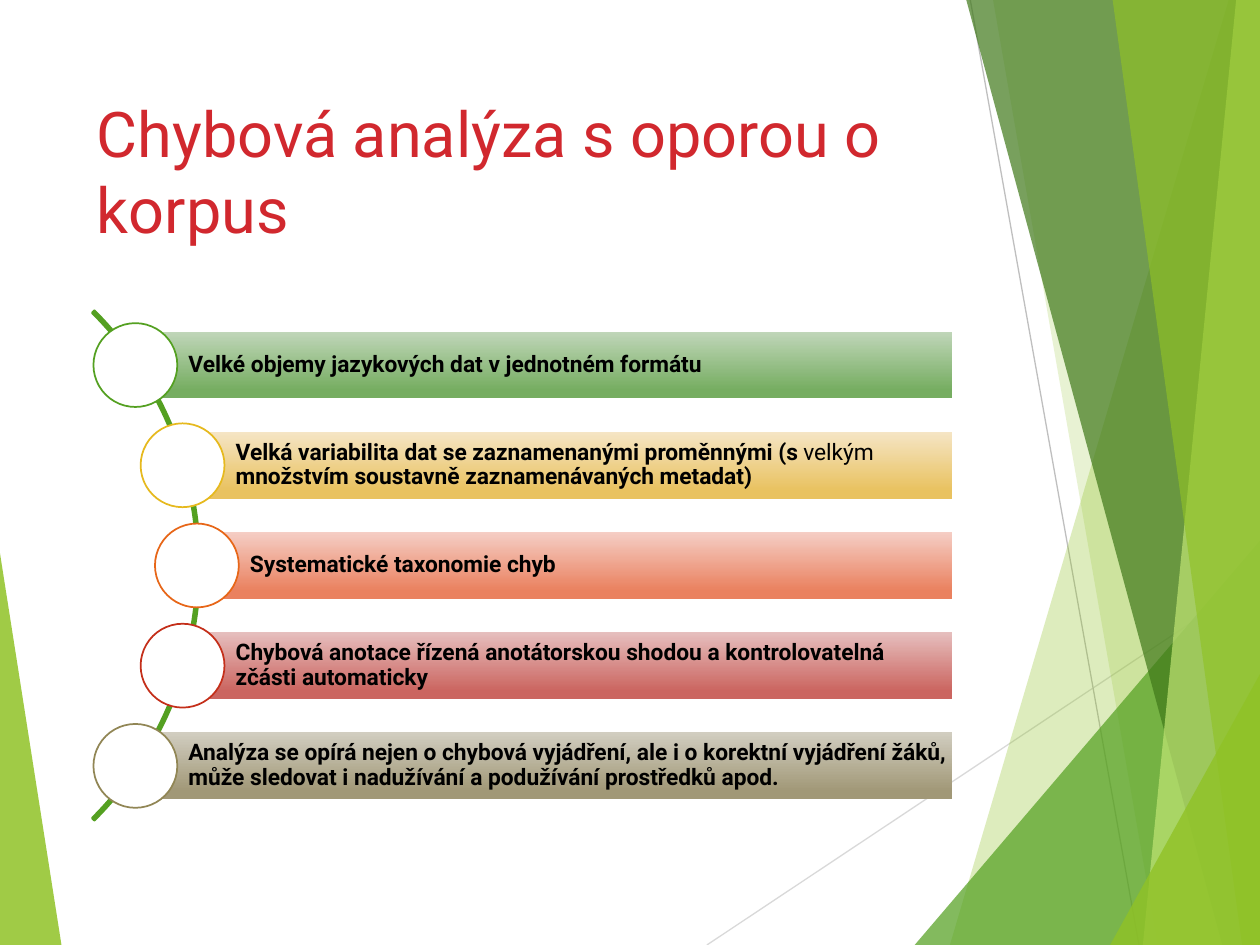
from math import sqrt

from lxml import etree
from pptx import Presentation
from pptx.dml.color import RGBColor
from pptx.enum.shapes import MSO_CONNECTOR, MSO_SHAPE
from pptx.enum.text import MSO_ANCHOR, PP_ALIGN
from pptx.oxml.ns import qn
from pptx.util import Cm, Pt

STRAIGHT = MSO_CONNECTOR.STRAIGHT
RECTANGLE, OVAL, BLOCK_ARC = MSO_SHAPE.RECTANGLE, MSO_SHAPE.OVAL, MSO_SHAPE.BLOCK_ARC
TOP, MIDDLE, LEFT = MSO_ANCHOR.TOP, MSO_ANCHOR.MIDDLE, PP_ALIGN.LEFT

BLACK = RGBColor(0x00, 0x00, 0x00)
WHITE = RGBColor(0xFF, 0xFF, 0xFF)
RED = RGBColor(0xD1, 0x28, 0x2E)
LIME = RGBColor(0x90, 0xC2, 0x26)
PALE_LIME = RGBColor(0xC0, 0xE4, 0x74)
GREEN = RGBColor(0x54, 0xA0, 0x21)
DARK_GREEN = RGBColor(0x3F, 0x78, 0x19)
LIGHT_GREY = RGBColor(0xD9, 0xD9, 0xD9)
GREY = RGBColor(0xBF, 0xBF, 0xBF)

WIDTH, HEIGHT = 25.4, 19.05

LEFT_WEDGE = (LIME, 85, [(0, 11.15), (1.24, HEIGHT), (0, HEIGHT)])
RAYS = [
    (LIGHT_GREY, (14.25, HEIGHT), (WIDTH, 11.63)),
    (GREY, (19.56, 0), (22.96, HEIGHT)),
]


def band(top_x, bottom_x):
    """Corners of a facet that runs from top to bottom at the right edge."""
    return [(top_x, 0), (bottom_x, HEIGHT), (WIDTH, HEIGHT), (WIDTH, 0)]


def corner(bottom_x, right_y):
    """Corners of a triangle in the bottom right of the slide."""
    return [(bottom_x, HEIGHT), (WIDTH, right_y), (WIDTH, HEIGHT)]


FACETS = [
    (LIME, 30, band(24.77, 19.15)),
    (LIME, 20, band(20.02, 23.34)),
    (GREEN, 72, corner(18.44, 10.9)),
    (DARK_GREEN, 70, band(19.48, 24.64)),
    (PALE_LIME, 70, band(24.92, 23.04)),
    (LIME, 65, band(22.43, 25.04)),
    (LIME, 80, corner(22.38, 13.59)),
]

# Ring colour, gradient start, gradient end, and (text, bold) spans
ITEMS = [
    ("54A021", "C0D6B9", "76AD61",
     [("Velké objemy jazykových dat v jednotném formátu", True)]),
    ("E6B91E", "F5E5C5", "E9C260",
     [("Velká variabilita dat se zaznamenanými proměnnými (s ", True),
      ("velkým", False),
      (" množstvím soustavně zaznamenávaných metadat)", True)]),
    ("E76618", "F5CEC5", "EA815F", [("Systematické taxonomie chyb", True)]),
    ("C42F1A", "E6BFBE", "CB6560",
     [("Chybová anotace řízená anotátorskou shodou a kontrolovatelná "
       "zčásti automaticky", True)]),
    ("918655", "D1CDC0", "A19877",
     [("Analýza se opírá nejen o chybová vyjádření, ale i o korektní vyjádření "
       "žáků, může sledovat i nadužívání a podužívání prostředků apod.", True)]),
]

ARC_X, ARC_Y, ARC_RADIUS = -3.23, 11.4, 7.26
CENTRE_RADIUS = 7.2
PITCH, BAR_HEIGHT, BAR_RIGHT, RING = 2.02, 1.35, 19.19, 1.69


def apply(target, values):
    for name, value in values.items():
        setattr(target, name, value)


class SlideBuilder:
    font_name = "Roboto"
    bar_frame = {"word_wrap": True, "vertical_anchor": MIDDLE,
                 "margin_left": Cm(1.07), "margin_right": Cm(0.09),
                 "margin_top": Cm(0.09), "margin_bottom": Cm(0.09)}

    def __init__(self, slide):
        self.slide = slide
        self.shapes = slide.shapes

    def title(self, text, left, top, width, height):
        box = self.shapes.title
        apply(box, {"left": Cm(left), "top": Cm(top),
                    "width": Cm(width), "height": Cm(height)})
        frame = box.text_frame
        apply(frame, {"text": text, "word_wrap": True, "vertical_anchor": TOP})
        para = frame.paragraphs[0]
        para.alignment = LEFT
        apply(para.font, {"name": self.font_name, "size": Pt(36)})
        para.font.color.rgb = RED

    def ray(self, color, start, end):
        line = self.shapes.add_connector(STRAIGHT, *map(Cm, start + end))
        line.line.color.rgb = color
        line.line.width = Pt(0.75)
        etree.SubElement(line._element.spPr, qn("a:effectLst"))

    def facet(self, color, opacity, corners):
        points = [(Cm(x), Cm(y)) for x, y in corners]
        builder = self.shapes.build_freeform(*points[0])
        builder.add_line_segments(points[1:], close=True)
        shape = builder.convert_to_shape()
        shape.shadow.inherit = False
        shape.line.fill.background()
        shape.fill.solid()
        shape.fill.fore_color.rgb = color
        color_node = shape._element.spPr.find(".//" + qn("a:srgbClr"))
        etree.SubElement(color_node, qn("a:alpha"), val=str(opacity * 1000))

    def preset(self, kind, left, top, width, height):
        shape = self.shapes.add_shape(kind, Cm(left), Cm(top), Cm(width), Cm(height))
        shape.shadow.inherit = False
        return shape

    def arc(self, centre_x, centre_y, radius):
        shape = self.preset(BLOCK_ARC, centre_x - radius, centre_y - radius,
                            2 * radius, 2 * radius)
        for index, value in enumerate((189, 27, 0.004)):
            shape.adjustments[index] = value
        shape.fill.background()
        shape.line.color.rgb = GREEN
        shape.line.width = Pt(1.5)

    def bar(self, left, centre_y, colors, spans):
        shape = self.preset(RECTANGLE, left, centre_y - BAR_HEIGHT / 2,
                            BAR_RIGHT - left, BAR_HEIGHT)
        shape.line.fill.background()
        shape.fill.gradient()
        shape.fill.gradient_angle = 270
        for stop, color, position in zip(shape.fill.gradient_stops, colors, (0, 0.88)):
            stop.color.rgb = RGBColor.from_string(color)
            stop.position = position
        apply(shape.text_frame, self.bar_frame)
        para = shape.text_frame.paragraphs[0]
        apply(para, {"alignment": LEFT, "line_spacing": 0.9})
        for text, bold in spans:
            span = para.add_run()
            span.text = text
            apply(span.font, {"name": self.font_name, "size": Pt(13), "bold": bold})
            span.font.color.rgb = BLACK

    def ring(self, centre_x, centre_y, color):
        shape = self.preset(OVAL, centre_x - RING / 2, centre_y - RING / 2, RING, RING)
        shape.fill.solid()
        shape.fill.fore_color.rgb = WHITE
        shape.line.color.rgb = RGBColor.from_string(color)
        shape.line.width = Pt(1)


def main():
    deck = Presentation()
    deck.slide_width, deck.slide_height = Cm(WIDTH), Cm(HEIGHT)
    page = SlideBuilder(deck.slides.add_slide(deck.slide_layouts[5]))

    page.facet(*LEFT_WEDGE)
    for ray in RAYS:
        page.ray(*ray)
    for facet in FACETS:
        page.facet(*facet)

    page.title("Chybová analýza s oporou o korpus", 1.7, 1.78, 17.63, 3.66)
    page.arc(ARC_X, ARC_Y, ARC_RADIUS)
    for index, (ring_color, start, end, spans) in enumerate(ITEMS):
        offset = (index - len(ITEMS) // 2) * PITCH
        x = ARC_X + sqrt(CENTRE_RADIUS ** 2 - offset ** 2)
        page.bar(x, ARC_Y + offset, (start, end), spans)
        page.ring(x, ARC_Y + offset, ring_color)

    deck.save("out.pptx")


if __name__ == "__main__":
    main()
